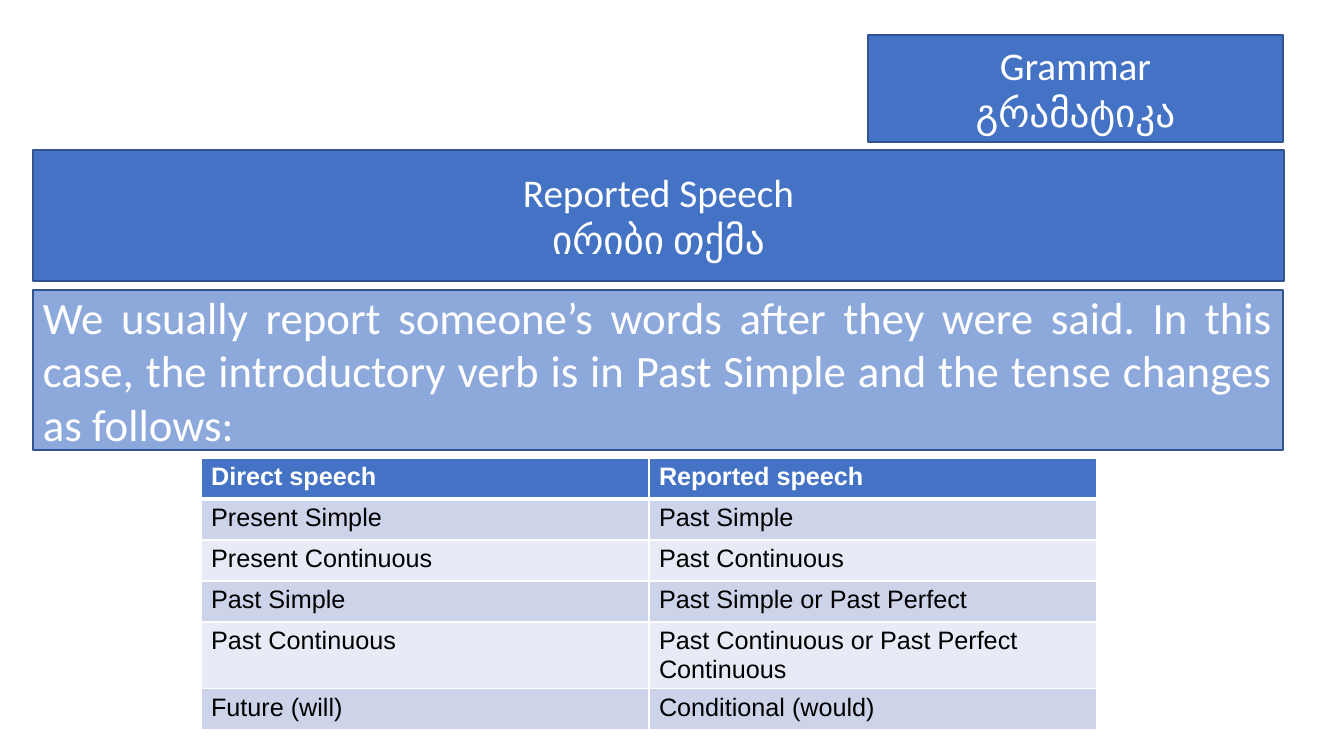
from lxml.etree import SubElement
from pptx import Presentation
from pptx.dml.color import RGBColor
from pptx.enum.shapes import MSO_SHAPE as SHAPE
from pptx.enum.text import MSO_ANCHOR as ANCHOR, MSO_AUTO_SIZE as FIT, PP_ALIGN as ALIGN
from pptx.oxml.ns import qn
from pptx.util import Emu, Pt

PX = 914400 / 100.8
WHITE, BLACK = "FFFFFF", "000000"
BLUE, PALE_BLUE, OUTLINE = "4472C4", "8DA9DB", "31538F"
BANDS = ("CDD4EA", "E8EBF5")
TENSES = [
    ("Direct speech", "Reported speech"),
    ("Present Simple", "Past Simple"),
    ("Present Continuous", "Past Continuous"),
    ("Past Simple", "Past Simple or Past Perfect"),
    ("Past Continuous", "Past Continuous or Past Perfect Continuous"),
    ("Future (will)", "Conditional (would)"),
]


def px(n):
    return Emu(round(n * PX))


def color(value):
    return RGBColor.from_string(value)


class GrammarSlide:
    """Holds the lesson style and the slide being built."""

    def __init__(self, prs):
        self.slide = prs.slides.add_slide(prs.slide_layouts[5])
        self.heading_font = "Calibri"
        self.table_font = "Arial"

    def style_font(self, p, name, size, ink, bold=False):
        p.font.name = name
        p.font.size = Pt(size)
        p.font.bold = bold
        p.font.color.rgb = color(ink)

    def fill_panel(self, sp, lines, fill, size, align):
        sp.fill.solid()
        sp.fill.fore_color.rgb = color(fill)
        sp.line.color.rgb = color(OUTLINE)
        sp.line.width = Pt(1)
        tf = sp.text_frame
        tf.word_wrap = True
        tf.auto_size = FIT.NONE
        tf.vertical_anchor = ANCHOR.MIDDLE
        tf.text = "\n".join(lines)
        for p in tf.paragraphs:
            p.alignment = align
            p.line_spacing = 1.0
            p.space_before = Pt(0)
            self.style_font(p, self.heading_font, size, WHITE)

    def title(self, box, lines):
        sp = self.slide.shapes.title
        sp.left, sp.top, sp.width, sp.height = map(px, box)
        self.fill_panel(sp, lines, BLUE, 28, ALIGN.CENTER)

    def panel(self, box, lines, fill=BLUE, size=28, align=ALIGN.CENTER):
        sp = self.slide.shapes.add_shape(SHAPE.RECTANGLE, *map(px, box))
        sp.shadow.inherit = False
        self.fill_panel(sp, lines, fill, size, align)

    def border(self, cell, side, width):
        ln = SubElement(cell._tc.get_or_add_tcPr(), qn(f"a:ln{side}"), w=str(Pt(width)))
        SubElement(SubElement(ln, qn("a:solidFill")), qn("a:srgbClr"), val=WHITE)

    def table(self, left, top, width, row_height, rows):
        box = map(px, (left, top, width, row_height * len(rows)))
        table = self.slide.shapes.add_table(len(rows), len(rows[0]), *box).table
        for i, row in enumerate(rows):
            table.rows[i].height = px(row_height)
            header = i == 0
            for j, text in enumerate(row):
                cell = table.cell(i, j)
                widths = {"L": 1, "R": 1, "T": 3 if i == 1 else 1, "B": 3 if header else 1}
                for side, line_width in widths.items():
                    self.border(cell, side, line_width)
                cell.fill.solid()
                cell.fill.fore_color.rgb = color(BLUE if header else BANDS[(i - 1) % 2])
                cell.text = text
                p = cell.text_frame.paragraphs[0]
                self.style_font(p, self.table_font, 18, WHITE if header else BLACK, header)


def main():
    prs = Presentation()
    prs.slide_width, prs.slide_height = px(1344), px(756)
    s = GrammarSlide(prs)
    s.title((33, 150, 1251, 131), ["Reported Speech", "ირიბი თქმა"])
    s.panel((868, 35, 415, 107), ["Grammar", "გრამატიკა"])
    rule = (
        "We usually report someone’s words after they were said. In this case, "
        "the introductory verb is in Past Simple and the tense changes as follows:"
    )
    s.panel((33, 290, 1250, 160), [rule], PALE_BLUE, 32, ALIGN.JUSTIFY)
    s.table(201, 458, 896, 41, TENSES)
    prs.save("out.pptx")


if __name__ == "__main__":
    main()
